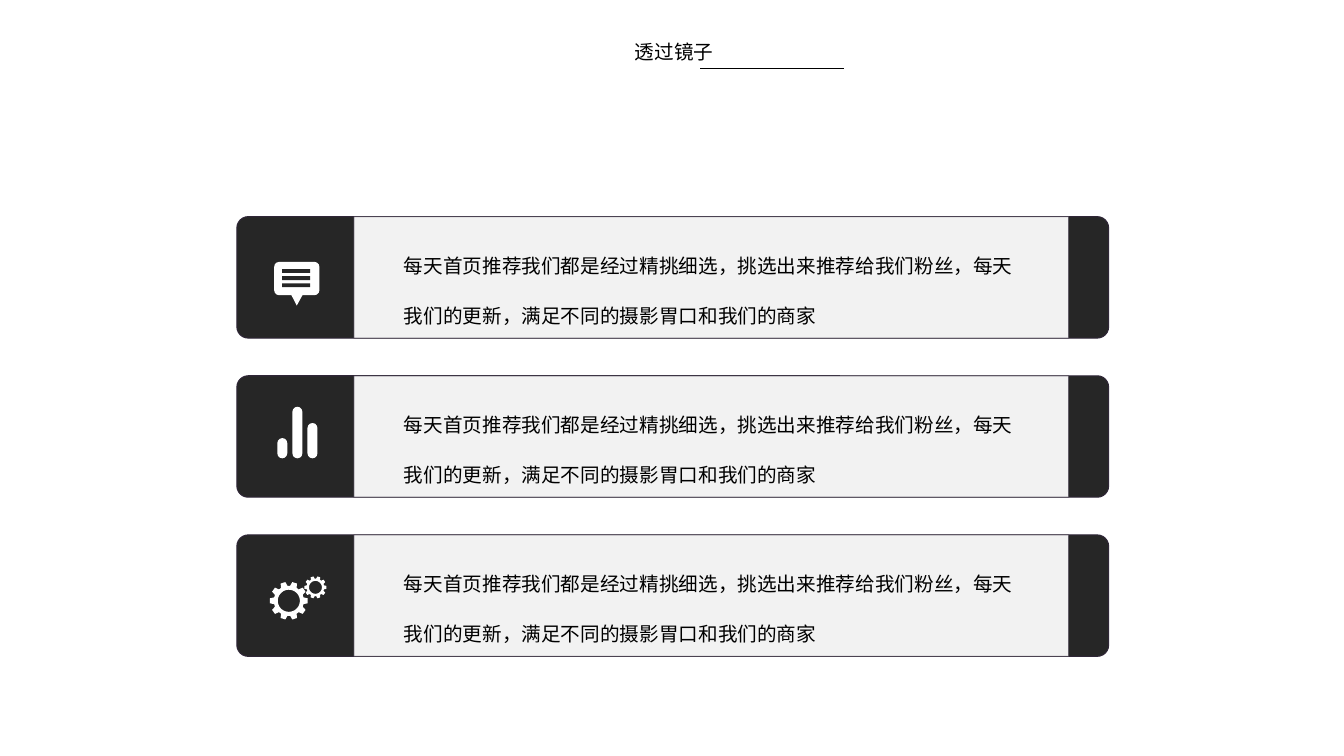
"""Builds a slide with a short heading and three icon cards."""
from math import cos, radians, sin

from lxml.etree import SubElement
from pptx import Presentation
from pptx.dml.color import RGBColor
from pptx.enum.shapes import MSO_CONNECTOR as Connector, MSO_SHAPE as Preset
from pptx.enum.text import MSO_AUTO_SIZE as AutoSize
from pptx.oxml.ns import qn
from pptx.util import Cm, Pt

HEADING = "透过镜子"
CARD_TEXT = "每天首页推荐我们都是经过精挑细选，挑选出来推荐给我们粉丝，每天我们的更新，满足不同的摄影胃口和我们的商家"
FONT = "Noto Sans"
DARK, PALE, WHITE, BLACK, EDGE = "262626", "F2F2F2", "FFFFFF", "000000", "2F2637"

CARD_LEFT, CARD_TOP, CARD_WIDTH, CARD_HEIGHT, CARD_PITCH = 5.97, 5.46, 21.97, 3.06, 4.01
PANEL_LEFT, PANEL_WIDTH = 8.92, 18.01
BAR_HEIGHTS = [0.51, 1.3, 0.89]
GEARS = [(7.28, 1.66, 0.48), (7.95, 1.32, 0.28)]
TEETH = 10

deck = Presentation()
deck.slide_width, deck.slide_height = Cm(33.87), Cm(19.05)
slide = deck.slides.add_slide(deck.slide_layouts[6])
shapes = slide.shapes


def color(value):
    return RGBColor.from_string(value)


def paint(shape, fill, edge=None):
    shape.shadow.inherit = False
    shape.fill.solid()
    shape.fill.fore_color.rgb = color(fill)
    if edge:
        shape.line.color.rgb = color(edge)
        shape.line.width = Pt(0.75)
    else:
        shape.line.fill.background()


def block(preset, left, top, width, height, fill, edge=None, corner=None):
    shape = shapes.add_shape(preset, Cm(left), Cm(top), Cm(width), Cm(height))
    paint(shape, fill, edge)
    if corner is not None:
        shape.adjustments[0] = corner
    return shape


def outline(*contours):
    contours = [[(Cm(x), Cm(y)) for x, y in contour] for contour in contours]
    builder = shapes.build_freeform(*contours[0][0])
    for number, contour in enumerate(contours):
        if number:
            builder.move_to(*contour[0])
        builder.add_line_segments(contour[1:], close=True)
    paint(builder.convert_to_shape(), WHITE)


def write(text, left, top, width, height, wrap=True, spacing=None):
    box = shapes.add_textbox(Cm(left), Cm(top), Cm(width), Cm(height))
    frame = box.text_frame
    frame.text = text
    frame.word_wrap = wrap
    frame.auto_size = AutoSize.SHAPE_TO_FIT_TEXT
    paragraph = frame.paragraphs[0]
    if spacing:
        paragraph.line_spacing = Pt(spacing)
    font = paragraph.runs[0].font
    font.size, font.name = Pt(14), FONT
    font.color.rgb = color(BLACK)
    SubElement(paragraph.runs[0].font._element, qn("a:ea")).set("typeface", FONT)


def draw_bubble(top):
    block(Preset.ROUNDED_RECTANGLE, 6.91, top + 1.14, 1.14, 0.84, WHITE, corner=0.15)
    outline([(7.32, top + 1.93), (7.65, top + 1.93), (7.48, top + 2.24)])
    for row in range(3):
        block(Preset.RECTANGLE, 7.11, top + 1.32 + row * 0.18, 0.71, 0.1, DARK)


def draw_bars(top):
    for column, height in enumerate(BAR_HEIGHTS):
        block(Preset.ROUNDED_RECTANGLE, 6.99 + column * 0.38, top + 2.08 - height,
              0.25, height, WHITE, corner=0.5)


def draw_gears(top):
    for x, drop, radius in GEARS:
        def point(angle, share):
            turn = radians(angle)
            return x + radius * share * cos(turn), top + drop + radius * share * sin(turn)

        rim = [point(tooth * 360 / TEETH + angle, share) for tooth in range(TEETH)
               for angle, share in [(-13, 0.79), (-7.5, 1), (7.5, 1), (13, 0.79)]]
        hole = [point(-angle, 0.58) for angle in range(0, 360, 10)]
        outline(rim, hole)


for position, draw_icon in enumerate([draw_bubble, draw_bars, draw_gears]):
    card_top = CARD_TOP + position * CARD_PITCH
    block(Preset.ROUNDED_RECTANGLE, CARD_LEFT, card_top, CARD_WIDTH, CARD_HEIGHT,
          DARK, EDGE, 0.093)
    panel = block(Preset.RECTANGLE, PANEL_LEFT, card_top, PANEL_WIDTH, CARD_HEIGHT, PALE, EDGE)
    edge_color = panel.line._ln.find(".//" + qn("a:srgbClr"))
    SubElement(edge_color, qn("a:alpha")).set("val", "59000")
    draw_icon(card_top)
    write(CARD_TEXT, 9.93, card_top + 0.13, 16, 2.82, spacing=36)

write(HEADING, 15.75, 0.89, 2.51, 0.86, wrap=False)
underline = shapes.add_connector(Connector.STRAIGHT, Cm(17.65), Cm(1.73), Cm(21.26), Cm(1.73))
underline.line.color.rgb = color(BLACK)
underline.line.width = Pt(0.5)
SubElement(underline._element.spPr, qn("a:effectLst"))

deck.save("out.pptx")
